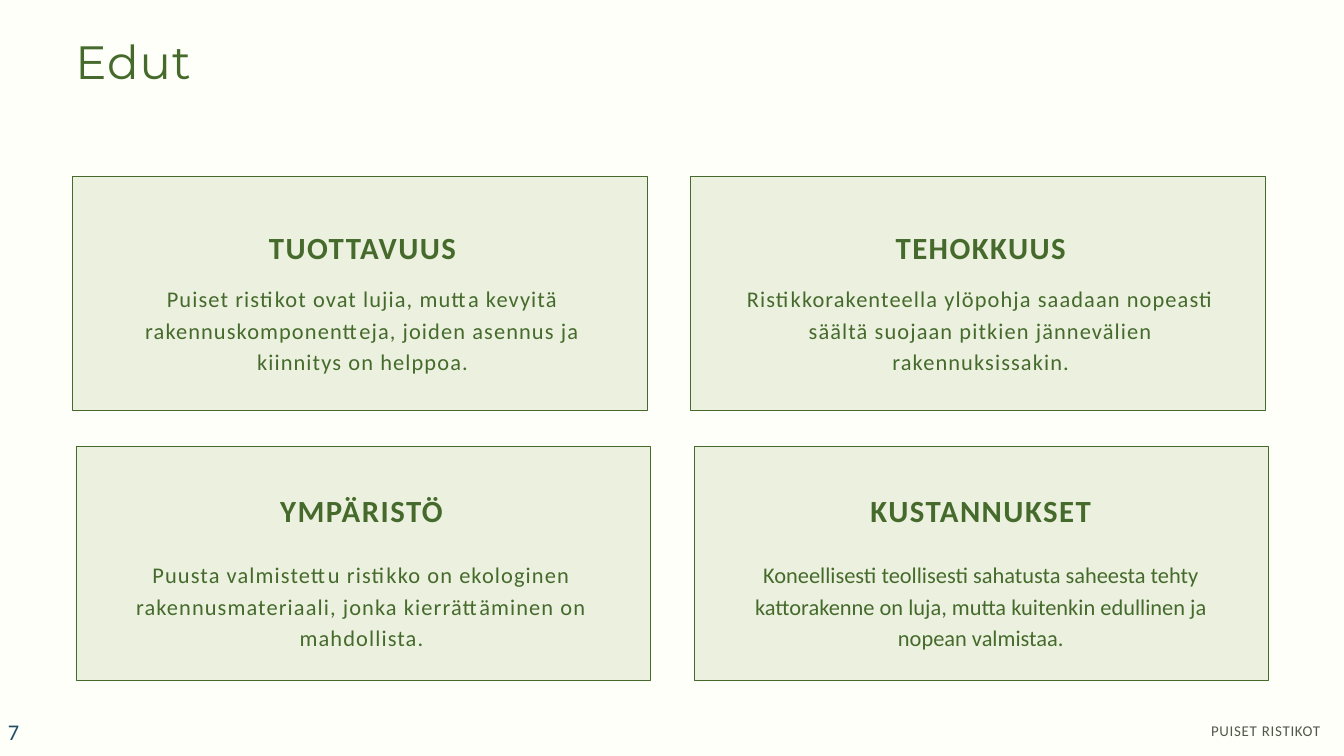
from dataclasses import dataclass

from pptx import Presentation
from pptx.dml.color import RGBColor
from pptx.enum.shapes import MSO_SHAPE
from pptx.enum.text import MSO_ANCHOR, PP_ALIGN
from pptx.util import Inches, Pt

COLORS = {
    "background": "FEFFF8",
    "card": "EBF1DE",
    "green": "456A2C",
    "footer": "52584D",
    "number": "1E4D65",
}

GRID_LEFT, GRID_TOP = 1.08, 2.62
COLUMN_STEP, ROW_STEP, ROW_SHIFT = 9.2, 4.02, 0.05
CARD_WIDTH, CARD_HEIGHT = 8.55, 3.48


@dataclass(frozen=True)
class TextStyle:
    """Font and paragraph settings for one kind of text."""

    size: float
    color: str = "green"
    spacing: float = 0
    line: float = 0
    align: PP_ALIGN = PP_ALIGN.CENTER
    bold: bool = False
    font: str = "Calibri"


TITLE = TextStyle(50, spacing=1, line=66.8, align=PP_ALIGN.LEFT, font="Montserrat")
HEADING = TextStyle(33, spacing=1.6, line=41.2, bold=True)
BODY = TextStyle(24, spacing=1.2, line=33.6)
TIGHT_BODY = TextStyle(24, line=33.6)
FOOTER = TextStyle(16, "footer", 0.8, 22.4, PP_ALIGN.RIGHT)
NUMBER = TextStyle(24, "number", 1.2, align=PP_ALIGN.LEFT)


@dataclass(frozen=True)
class Benefit:
    """One benefit card: its words and the place of its text."""

    heading: str
    body: str
    body_style: TextStyle = BODY
    text_left: float = 0.62
    text_width: float = 7.39


BENEFITS = [
    [
        Benefit("TUOTTAVUUS", "Puiset ristikot ovat lujia, mutta kevyitä rakennuskomponentteja, "
                "joiden asennus ja kiinnitys on helppoa."),
        Benefit("TEHOKKUUS", "Ristikkorakenteella ylöpohja saadaan nopeasti säältä suojaan "
                "pitkien jännevälien rakennuksissakin."),
    ],
    [
        Benefit("YMPÄRISTÖ", "Puusta valmistettu ristikko on ekologinen rakennusmateriaali, "
                "jonka kierrättäminen on mahdollista.", text_left=0.29, text_width=7.92),
        Benefit("KUSTANNUKSET", "Koneellisesti teollisesti sahatusta saheesta tehty kattorakenne "
                "on luja, mutta kuitenkin edullinen ja nopean valmistaa.", TIGHT_BODY, 0.57),
    ],
]
HEADING_TOPS = (0.76, 0.66)
BODY_TOPS = (1.56, 1.65)


def color(name):
    """Return a named colour."""
    return RGBColor.from_string(COLORS[name])


def write(frame, text, style, inset=0.0, anchor=MSO_ANCHOR.TOP):
    """Write one styled paragraph into a text frame."""
    frame.word_wrap = True
    frame.vertical_anchor = anchor
    frame.margin_left = frame.margin_right = Inches(inset)
    frame.margin_top = frame.margin_bottom = Inches(inset / 2)
    paragraph = frame.paragraphs[0]
    paragraph.alignment = style.align
    if style.line:
        paragraph.line_spacing = Pt(style.line)
    run = paragraph.add_run()
    run.text = text
    run.font.name = style.font
    run.font.size = Pt(style.size)
    run.font.bold = style.bold
    run.font.color.rgb = color(style.color)
    if style.spacing:
        run.font._element.set("spc", str(round(style.spacing * 100)))


def add_text(slide, box, text, style, **frame_options):
    """Add a text box at left, top, width, height in inches."""
    label = slide.shapes.add_textbox(*map(Inches, box))
    write(label.text_frame, text, style, **frame_options)


def add_title(slide, text):
    """Place and fill the title placeholder."""
    title = slide.shapes.title
    title.left, title.top, title.width, title.height = map(Inches, (1.12, 0.39, 17.71, 0.89))
    write(title.text_frame, text, TITLE)


def add_card(slide, row, column, benefit):
    """Add a benefit card at a row and column of the grid."""
    left = GRID_LEFT + column * COLUMN_STEP + row * ROW_SHIFT
    top = GRID_TOP + row * ROW_STEP
    card = slide.shapes.add_shape(
        MSO_SHAPE.RECTANGLE, *map(Inches, (left, top, CARD_WIDTH, CARD_HEIGHT)))
    card.shadow.inherit = False
    card.fill.solid()
    card.fill.fore_color.rgb = color("card")
    card.line.color.rgb = color("green")
    card.line.width = Pt(0.75)
    text_left = left + benefit.text_left
    add_text(slide, (text_left, top + HEADING_TOPS[row], benefit.text_width, 0.56),
             benefit.heading, HEADING)
    add_text(slide, (text_left, top + BODY_TOPS[row], benefit.text_width, 1.4),
             benefit.body, benefit.body_style)


def main():
    """Build and save the slide."""
    deck = Presentation()
    deck.slide_width, deck.slide_height = Inches(20), Inches(11.25)
    slide = deck.slides.add_slide(deck.slide_layouts[5])
    slide.background.fill.solid()
    slide.background.fill.fore_color.rgb = color("background")
    add_title(slide, "Edut")
    for row, benefits in enumerate(BENEFITS):
        for column, benefit in enumerate(benefits):
            add_card(slide, row, column, benefit)
    add_text(slide, (11.33, 10.7, 8.32, 0.29), "PUISET RISTIKOT", FOOTER)
    add_text(slide, (0.02, 10.69, 2.33, 0.4), "7", NUMBER, inset=0.1, anchor=MSO_ANCHOR.MIDDLE)
    deck.save("out.pptx")


if __name__ == "__main__":
    main()
